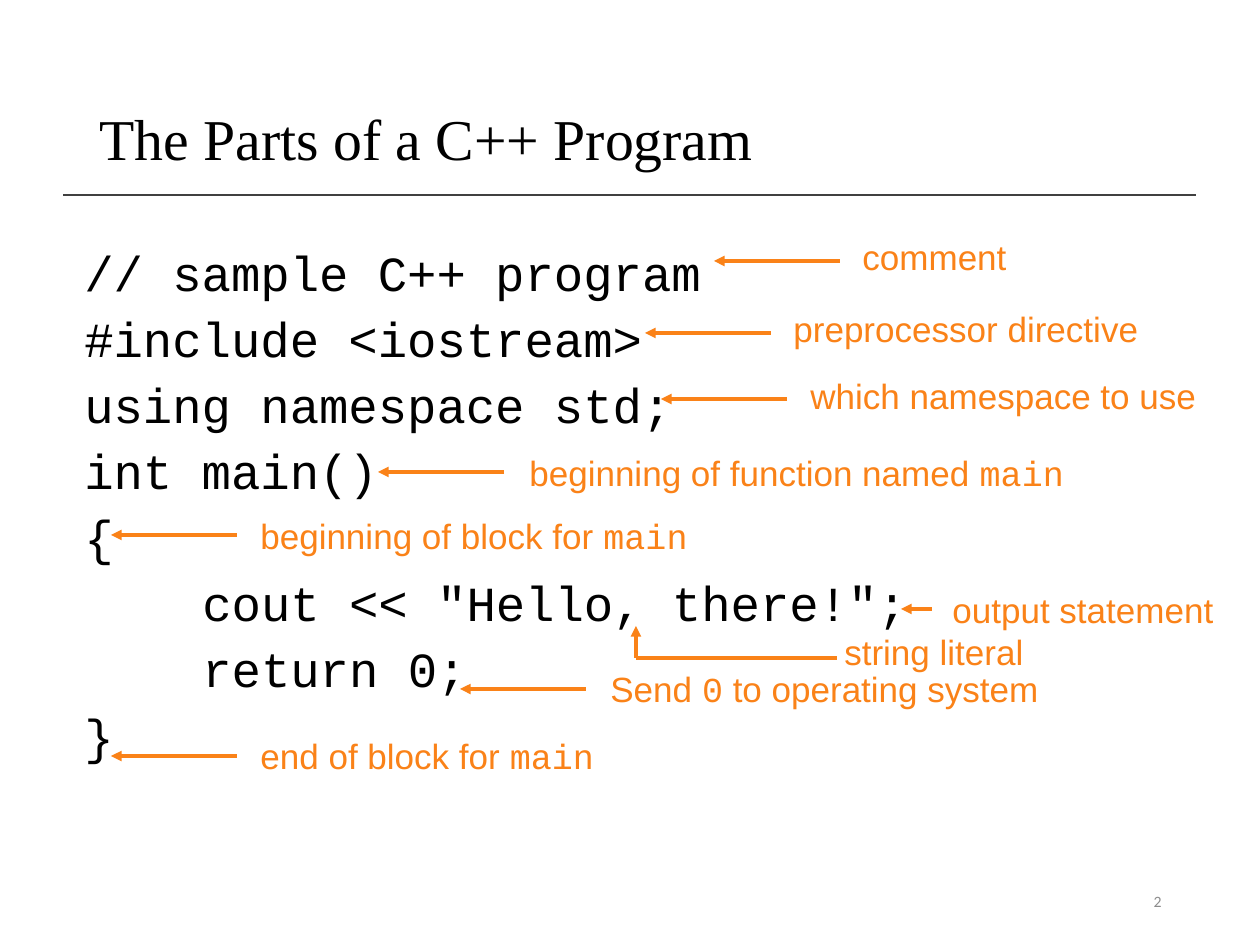
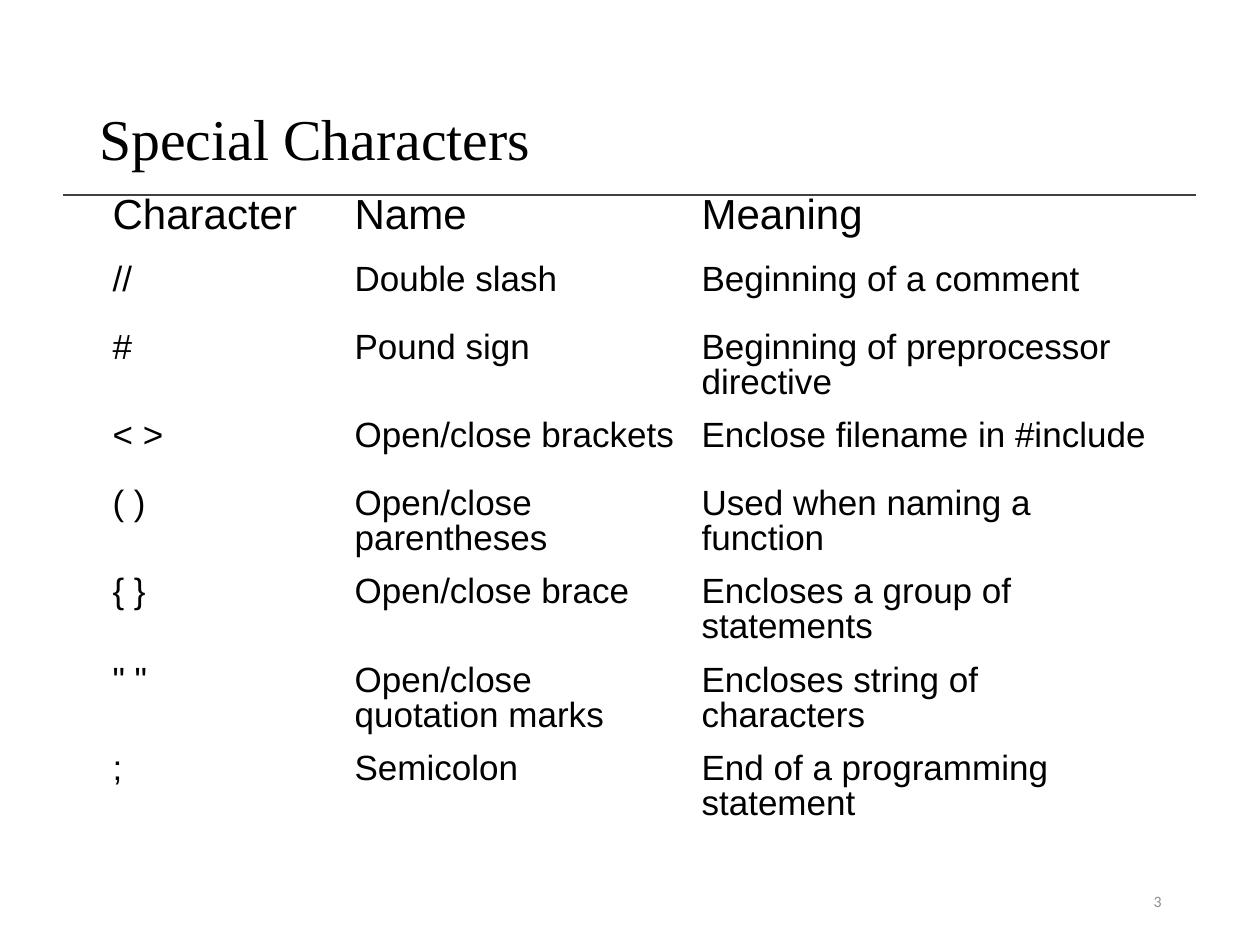
"""Build two slides on the parts of a C++ program and its special characters."""
from lxml import etree
from pptx import Presentation, util as u
from pptx.dml.color import RGBColor
from pptx.enum import shapes, text
from pptx.oxml.ns import qn

HUE = {"ink": "000000", "note": "FA8218", "rule": "404040", "page": "8C8C8C"}
SANS, MONO, SERIF, FOOT = "Arial", "Courier New", "Times New Roman", "Calibri"
PX = 914400 / 126
PLAIN = "{2D5ABB26-0587-4C30-8999-92F81FD0307C}"

CODE = [
    (0, "// sample C++ program"),
    (0, "#include <iostream>"),
    (0, "using namespace std;"),
    (0, "int main()"),
    (0, "{"),
    (1, 'cout << "Hello, there!";'),
    (1, "return 0;"),
    (0, "}"),
]
TAB = 118

# tip x, tip y, arrow length, label (left, top, width), words with `code`
NOTES = [
    (714, 261, 126, (850, 229, 252), "comment"),
    (645, 333, 126, (781, 301, 394), "preprocessor directive"),
    (661, 399, 126, (798, 368, 431), "which namespace to use"),
    (378, 472, 126, (517, 445, 577), "beginning of function named `main`"),
    (111, 535, 126, (248, 508, 577), "beginning of block for `main`"),
    (901, 609, 31, (940, 582, 320), "output statement"),
    (460, 689, 126, (598, 661, 577), "Send `0` to operating system"),
    (111, 756, 126, (248, 728, 360), "end of block for `main`"),
]

SIGNS = [
    ("Character", "Name", "Meaning"),
    ("//", "Double slash", "Beginning of a comment"),
    ("#", "Pound sign", "Beginning of preprocessor directive"),
    ("< >", "Open/close brackets", "Enclose filename in #include"),
    ("( )", "Open/close parentheses", "Used when naming a function"),
    ("{ }", "Open/close brace", "Encloses a group of statements"),
    ('" "', "Open/close quotation marks", "Encloses string of characters"),
    (";", "Semicolon", "End of a programming statement"),
]
COLS = (242, 347, 472)
SHORT, TALL = 68, 88
ROWS = (SHORT, SHORT, TALL, SHORT, TALL, TALL, TALL, TALL)


def px(n):
    return u.Emu(round(n * PX))


def add_run(para, words, size, face, hue="ink"):
    run = para.add_run()
    run.text = words
    run.font.size = u.Pt(size)
    run.font.name = face
    run.font.color.rgb = RGBColor.from_string(HUE[hue])


def add_box(slide, left, top, width, height, mid=False):
    frame = slide.shapes.add_textbox(*map(px, (left, top, width, height))).text_frame
    frame.word_wrap = True
    if mid:
        frame.vertical_anchor = text.MSO_ANCHOR.MIDDLE
    return frame


def add_line(slide, x1, y1, x2, y2, hue="note", width=2, head=True):
    line = slide.shapes.add_connector(
        shapes.MSO_CONNECTOR.STRAIGHT, *map(px, (x1, y1, x2, y2)))
    line.line.color.rgb = RGBColor.from_string(HUE[hue])
    line.line.width = u.Pt(width)
    if head:
        etree.SubElement(line.line._get_or_add_ln(), qn("a:tailEnd"), type="triangle")
    etree.SubElement(line._element.spPr, qn("a:effectLst"))


def add_slide(deck, title, page):
    slide = deck.slides.add_slide(deck.slide_layouts[6])
    add_line(slide, 63, 195, 1196, 195, "rule", 1, False)
    para = add_box(slide, 87, 50, 1086, 183, True).paragraphs[0]
    para.line_spacing = 0.9
    add_run(para, title, 33, SERIF)
    para = add_box(slide, 890, 876, 284, 50, True).paragraphs[0]
    para.alignment = text.PP_ALIGN.RIGHT
    add_run(para, str(page), 9, FOOT, "page")
    return slide


def add_code(slide):
    frame = add_box(slide, 72, 235, 1056, 643)
    frame.margin_top = 0
    for i, (depth, words) in enumerate(CODE):
        para = frame.add_paragraph() if i else frame.paragraphs[0]
        para.line_spacing = u.Pt(37.8)
        para._p.get_or_add_pPr().set("marL", str(px(depth * TAB)))
        add_run(para, words, 28, MONO)


def add_notes(slide):
    for x, y, size, (left, top, width), words in NOTES:
        add_line(slide, x + size, y, x, y)
        para = add_box(slide, left, top, width, 55).paragraphs[0]
        for i, part in enumerate(words.split("`")):
            if part:
                add_run(para, part, 20, MONO if i % 2 else SANS, "note")


def add_string(slide):
    add_line(slide, 837, 658, 636, 658, head=False)
    add_line(slide, 636, 658, 636, 626)
    para = add_box(slide, 825, 636, 218, 43).paragraphs[0]
    para.alignment = text.PP_ALIGN.CENTER
    para.line_spacing = 0.7
    add_run(para, "string literal", 20, SANS, "note")


def add_signs(slide):
    size = (100, 189, sum(COLS), sum(ROWS))
    table = slide.shapes.add_table(len(ROWS), len(COLS), *map(px, size)).table
    table.horz_banding = False
    table._tbl.tblPr.find(qn("a:tableStyleId")).text = PLAIN
    for col, width in zip(table.columns, COLS):
        col.width = px(width)
    for r, (height, row) in enumerate(zip(ROWS, SIGNS)):
        table.rows[r].height = px(height)
        for c, words in enumerate(row):
            cell = table.cell(r, c)
            cell.fill.background()
            para = cell.text_frame.paragraphs[0]
            para.line_spacing = 0.9
            add_run(para, words, 20 if r else 24, SANS)


def main():
    deck = Presentation()
    deck.slide_width, deck.slide_height = px(1260), px(945)
    parts = add_slide(deck, "The Parts of a C++ Program", 2)
    add_code(parts)
    add_notes(parts)
    add_string(parts)
    add_signs(add_slide(deck, "Special Characters", 3))
    deck.save("out.pptx")


if __name__ == "__main__":
    main()
